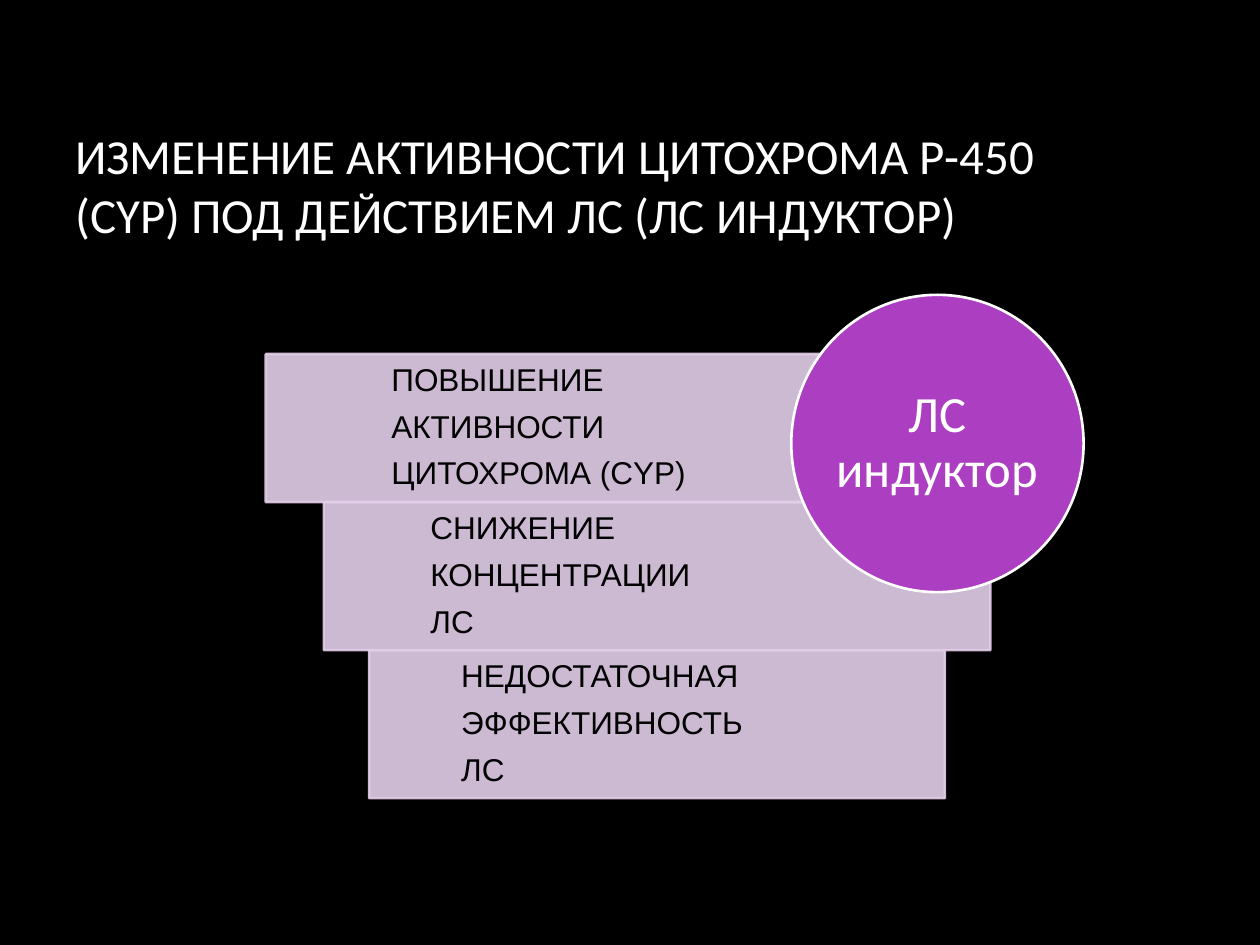
from lxml.etree import SubElement
from pptx import Presentation
from pptx.dml.color import RGBColor
from pptx.enum.shapes import MSO_SHAPE as SHAPE
from pptx.enum.text import MSO_ANCHOR as ANCHOR, PP_ALIGN as ALIGN
from pptx.oxml.ns import qn
from pptx.util import Inches, Pt

COLORS = {"bg": "000000", "bar": "E3CEE9", "circle": "AC3EC1",
          "light": "FFFFFF", "dark": "000000"}
TITLE = "ИЗМЕНЕНИЕ АКТИВНОСТИ ЦИТОХРОМА Р-450 (CYP) ПОД ДЕЙСТВИЕМ ЛС (ЛС ИНДУКТОР)"
EFFECTS = [
    (2.11, 6.23, ["ПОВЫШЕНИЕ", "АКТИВНОСТИ", "ЦИТОХРОМА (CYP)"]),
    (2.57, 5.29, ["СНИЖЕНИЕ", "КОНЦЕНТРАЦИИ", "ЛС"]),
    (2.93, 4.57, ["НЕДОСТАТОЧНАЯ", "ЭФФЕКТИВНОСТЬ", "ЛС"]),
]


def rgb(name):
    return RGBColor.from_string(COLORS[name])


def set_attrs(obj, values):
    for name, value in values.items():
        setattr(obj, name, value)


def write(sp, lines, font, size, color, frame, para):
    tf = sp.text_frame
    set_attrs(tf, {"word_wrap": True, "vertical_anchor": ANCHOR.MIDDLE, **frame})
    for i, line in enumerate(lines):
        p = tf.add_paragraph() if i else tf.paragraphs[0]
        set_attrs(p, para)
        r = p.add_run()
        r.text = line
        set_attrs(r.font, {"name": font, "size": Pt(size)})
        r.font.color.rgb = rgb(color)


def add_panel(s, kind, box, fill, line, opacity=None):
    sp = s.shapes.add_shape(kind, *map(Inches, box))
    sp.shadow.inherit = False
    sp.fill.solid()
    sp.fill.fore_color.rgb = rgb(fill)
    sp.line.color.rgb = rgb(line)
    sp.line.width = Pt(1.5)
    if opacity:
        for clr in sp._element.spPr.iter(qn("a:srgbClr")):
            SubElement(clr, qn("a:alpha"), val=str(opacity * 1000))
    return sp


def add_title(s, box):
    sp = s.shapes.add_textbox(*map(Inches, box))
    write(sp, [TITLE], "Calibri", 28, "light", {}, {})


def add_effects(s, top, height):
    para = {"alignment": ALIGN.LEFT, "line_spacing": 0.9, "space_after": Pt(7.2)}
    pad = Inches(0.14)
    for i, (left, width, lines) in enumerate(EFFECTS):
        box = (left, top + i * height, width, height)
        sp = add_panel(s, SHAPE.RECTANGLE, box, "bar", "bar", 90)
        frame = {"margin_left": Inches(0.16 * width), "margin_right": pad,
                 "margin_top": pad, "margin_bottom": pad}
        write(sp, lines, "Arial", 18, "dark", frame, para)


def add_inducer(s, box):
    sp = add_panel(s, SHAPE.OVAL, box, "circle", "light")
    frame = {f"margin_{side}": 0 for side in ("left", "right", "top", "bottom")}
    para = {"alignment": ALIGN.CENTER, "line_spacing": 0.9}
    write(sp, ["ЛС индуктор"], "Calibri", 29, "light", frame, para)


def main():
    prs = Presentation()
    set_attrs(prs, {"slide_width": Inches(10), "slide_height": Inches(7.5)})
    s = prs.slides.add_slide(prs.slide_layouts[6])
    s.background.fill.solid()
    s.background.fill.fore_color.rgb = rgb("bg")
    add_title(s, (0.5, 0.67, 8.5, 1.59))
    add_effects(s, 2.81, 1.175)
    add_inducer(s, (6.28, 2.34, 2.32, 2.36))
    prs.save("out.pptx")


if __name__ == "__main__":
    main()
